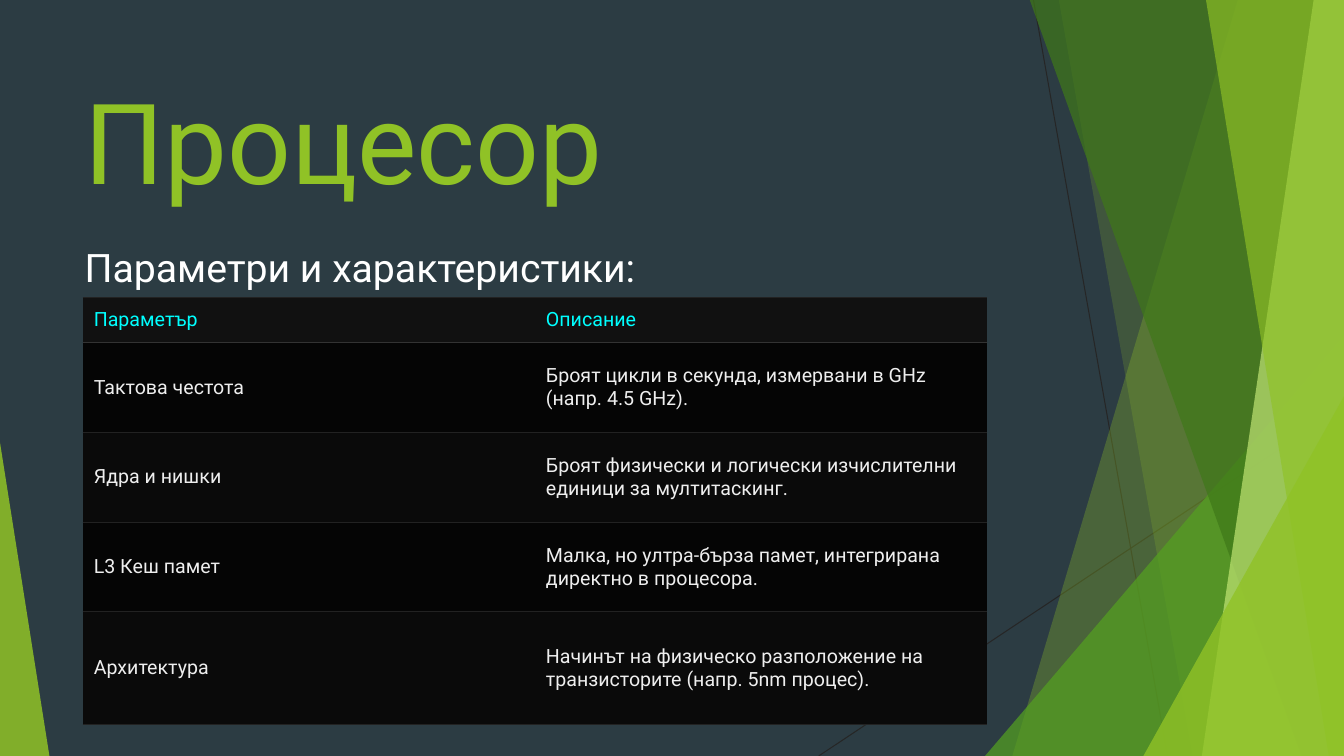
from dataclasses import dataclass

from lxml.etree import SubElement
from pptx import Presentation
from pptx.dml.color import RGBColor as RGB
from pptx.enum.shapes import MSO_CONNECTOR as Connector, MSO_SHAPE as Preset
from pptx.enum.text import MSO_ANCHOR as Anchor, MSO_AUTO_SIZE as AutoSize, PP_ALIGN as Align
from pptx.oxml.ns import qn
from pptx.util import Pt

SCALE = 9144  # EMU per px, 100 px to the inch
WIDTH, HEIGHT = 1333, 750


@dataclass(frozen=True)
class Theme:
    font: str = "Roboto"
    background: str = "2C3C43"
    accent: str = "90C226"
    green: str = "54A021"
    dark_green: str = "3F7819"
    pale_green: str = "C0E474"
    hairline: str = "262626"
    white: str = "FFFFFF"
    header_text: str = "00FFFF"
    cell_text: str = "EEEEEE"
    header_fill: str = "111111"
    row_fills: tuple = ("050505", "0A0A0A")
    header_rule: str = "333333"
    row_rule: str = "222222"
    title_size: int = 80
    body_size: int = 28
    cell_size: int = 14


THEME = Theme()

ROWS = [
    ("Параметър", "Описание"),
    ("Тактова честота", "Броят цикли в секунда, измервани в GHz (напр. 4.5 GHz)."),
    ("Ядра и нишки", "Броят физически и логически изчислителни единици за мултитаскинг."),
    ("L3 Кеш памет", "Малка, но ултра-бърза памет, интегрирана директно в процесора."),
    ("Архитектура", "Начинът на физическо разположение на транзисторите (напр. 5nm процес)."),
]
ROW_HEIGHTS = (44, 89, 89, 89, 112)


def px(value):
    return round(value * SCALE)


def add_run(paragraph, text, size, color):
    run = paragraph.add_run()
    run.text = text
    run.font.name = THEME.font
    run.font.size = Pt(size)
    run.font.color.rgb = RGB.from_string(color)


def paint(shape, color, opacity):
    shape.shadow.inherit = False
    shape.line.fill.background()
    shape.fill.solid()
    shape.fill.fore_color.rgb = RGB.from_string(color)
    fill = shape.element.spPr.find(qn("a:solidFill"))
    SubElement(fill[0], qn("a:alpha"), val=str(opacity * 1000))


def add_hairline(slide, start, end):
    line = slide.shapes.add_connector(Connector.STRAIGHT, *map(px, start + end))
    line.line.color.rgb = RGB.from_string(THEME.hairline)
    line.line.width = Pt(0.75)
    SubElement(line.element.spPr, qn("a:effectLst"))


def add_band(slide, top_left, bottom_left, color, opacity):
    """A band from a slanted left edge to the right edge of the slide."""
    builder = slide.shapes.build_freeform(top_left, -1, scale=SCALE)
    builder.add_line_segments([(WIDTH, -1), (WIDTH, HEIGHT), (bottom_left, HEIGHT)])
    paint(builder.convert_to_shape(), color, opacity)


def add_corner(slide, left, top, width, apex, color, opacity):
    """A right triangle standing on the bottom edge of the slide."""
    box = map(px, (left, top, width, HEIGHT - top))
    triangle = slide.shapes.add_shape(Preset.ISOSCELES_TRIANGLE, *box)
    triangle.adjustments[0] = apex
    paint(triangle, color, opacity)


def add_decoration(slide):
    add_hairline(slide, (1025, 0), (1158, HEIGHT))
    add_hairline(slide, (WIDTH, 403), (812, HEIGHT))
    add_band(slide, 1228, 1004, THEME.accent, 30)
    add_band(slide, 1050, 1183, THEME.accent, 20)
    add_corner(slide, 977, 333, 356, 1, THEME.green, 72)
    add_band(slide, 1021, 1291, THEME.dark_green, 70)
    add_band(slide, 1303, 1192, THEME.pale_green, 70)
    add_band(slide, 1196, 1318, THEME.accent, 65)
    add_corner(slide, 1134, 393, 199, 1, THEME.accent, 80)
    add_corner(slide, 0, 439, 49, 0, THEME.accent, 85)


def fill_placeholder(slide, index, box, text, size, color, anchor):
    placeholder = slide.placeholders[index]
    placeholder.left, placeholder.top, placeholder.width, placeholder.height = map(px, box)
    frame = placeholder.text_frame
    frame.word_wrap = True
    frame.auto_size = AutoSize.NONE
    frame.vertical_anchor = anchor
    paragraph = frame.paragraphs[0]
    paragraph.alignment = Align.LEFT
    paragraph.space_before = Pt(0)
    properties = paragraph._p.get_or_add_pPr()
    properties.set("marL", "0")
    properties.set("indent", "0")
    SubElement(properties, qn("a:buNone"))
    add_run(paragraph, text, size, color)
    slide.shapes.element.append(placeholder.element)  # in front of the decoration


def set_borders(cell, **rules):
    """Each rule is side=(color, points), or side=None for no line."""
    properties = cell._tc.get_or_add_tcPr()
    for position, side in enumerate(("lnL", "lnR", "lnT", "lnB")):
        rule = rules.get(side)
        line = SubElement(properties, qn("a:" + side))
        properties.insert(position, line)
        if rule is None:
            SubElement(line, qn("a:noFill"))
            continue
        color, points = rule
        line.set("w", str(Pt(points)))
        SubElement(SubElement(line, qn("a:solidFill")), qn("a:srgbClr"), val=color)


def add_parameter_table(slide, left, top, width):
    box = map(px, (left, top, width, sum(ROW_HEIGHTS)))
    table = slide.shapes.add_table(len(ROWS), len(ROWS[0]), *box).table
    table.horz_banding = False
    header_rule, row_rule = (THEME.header_rule, 1), (THEME.row_rule, 0.5)
    for row, (texts, height) in enumerate(zip(ROWS, ROW_HEIGHTS)):
        table.rows[row].height = px(height)
        fill = THEME.row_fills[(row - 1) % 2] if row else THEME.header_fill
        color = THEME.cell_text if row else THEME.header_text
        for column, text in enumerate(texts):
            cell = table.cell(row, column)
            cell.fill.solid()
            cell.fill.fore_color.rgb = RGB.from_string(fill)
            cell.vertical_anchor = Anchor.MIDDLE
            cell.margin_left = cell.margin_right = px(11)
            cell.margin_top = cell.margin_bottom = px(11)
            paragraph = cell.text_frame.paragraphs[0]
            paragraph.font.bold = False
            add_run(paragraph, text, THEME.cell_size, color)
            set_borders(cell, lnT=header_rule if row == 1 else row_rule,
                        lnB=row_rule if row else header_rule)


def build_slide(presentation):
    slide = presentation.slides.add_slide(presentation.slide_layouts[1])
    slide.background.fill.solid()
    slide.background.fill.fore_color.rgb = RGB.from_string(THEME.background)
    add_decoration(slide)
    fill_placeholder(slide, 0, (74, 67, 940, 144), "Процесор",
                     THEME.title_size, THEME.accent, Anchor.MIDDLE)
    fill_placeholder(slide, 1, (74, 236, 940, 424), "Параметри и характеристики:",
                     THEME.body_size, THEME.white, Anchor.TOP)
    add_parameter_table(slide, 82, 295, 897)


def main():
    presentation = Presentation()
    presentation.slide_width, presentation.slide_height = px(WIDTH), px(HEIGHT)
    build_slide(presentation)
    presentation.save("out.pptx")


if __name__ == "__main__":
    main()
